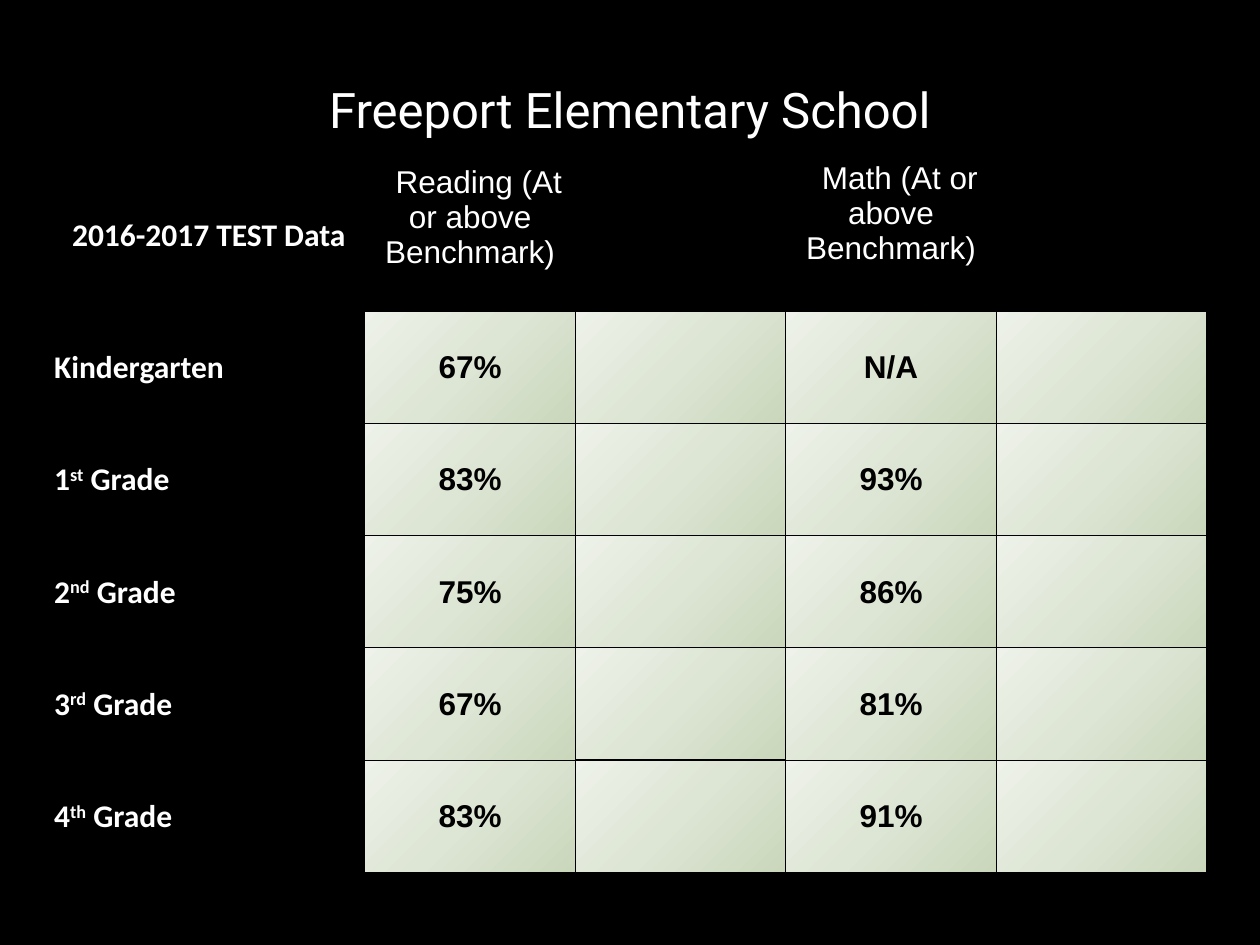
from dataclasses import dataclass

from pptx import Presentation
from pptx.dml.color import RGBColor as RGB
from pptx.enum.text import MSO_ANCHOR as Anchor, PP_ALIGN as Align
from pptx.oxml import parse_xml
from pptx.oxml.ns import nsdecls
from pptx.util import Pt


@dataclass(frozen=True)
class Theme:
    dark: str = "000000"
    light: str = "FFFFFF"
    stops: tuple = ((0, "CAD7BB"), (50, "DDE5D4"), (100, "EEF2EA"))
    title_size: int = 28
    text_size: int = 18
    title_font: str = "Roboto"
    label_font: str = "Calibri"
    value_font: str = "Arial"


class SlideBuilder:
    """Draws styled elements on the current slide."""

    def __init__(self, prs, theme):
        self.theme = theme
        self.s = prs.slides.add_slide(prs.slide_layouts[6])
        fill = self.s.background.fill
        fill.solid()
        fill.fore_color.rgb = RGB.from_string(theme.dark)

    def table(self, left, top, widths, heights):
        sp = self.s.shapes.add_table(len(heights), len(widths), Pt(left), Pt(top),
                                     Pt(sum(widths)), Pt(sum(heights)))
        tbl = sp.table
        tbl.first_row = tbl.horz_banding = False
        for col, width in zip(tbl.columns, widths):
            col.width = Pt(width)
        for row, height in zip(tbl.rows, heights):
            row.height = Pt(height)
        return tbl

    def cell(self, cell, borders, shaded=False):
        tcPr = cell._tc.get_or_add_tcPr()
        for side in "LRTB":
            tcPr.append(parse_xml(
                f'<a:ln{side} {nsdecls("a")} w="{Pt(borders.get(side, 0.5))}"><a:solidFill>'
                f'<a:srgbClr val="{self.theme.dark}"/></a:solidFill></a:ln{side}>'))
        if not shaded:
            cell.fill.background()
            return
        stops = "".join(f'<a:gs pos="{pos * 1000}"><a:srgbClr val="{color}"/></a:gs>'
                        for pos, color in self.theme.stops)
        tcPr.append(parse_xml(
            f'<a:gradFill {nsdecls("a")} rotWithShape="1"><a:gsLst>{stops}</a:gsLst>'
            f'<a:lin ang="{225 * 60000}" scaled="0"/></a:gradFill>'))

    def text(self, cell, parts, color, align=Align.CENTER, indent=0, bottom=0, **font):
        box = {"vertical_anchor": Anchor.MIDDLE, "margin_left": Pt(0.7),
               "margin_right": Pt(0.7), "margin_top": Pt(0.7), "margin_bottom": Pt(bottom)}
        for name, value in box.items():
            setattr(cell, name, value)
        p = cell.text_frame.paragraphs[0]
        p.alignment = align
        if indent:
            p._p.get_or_add_pPr().set("indent", str(Pt(indent)))
        for i, part in enumerate(parts):
            r = p.add_run()
            r.text = part
            for name, value in ({"size": Pt(self.theme.text_size)} | font).items():
                setattr(r.font, name, value)
            r.font.color.rgb = RGB.from_string(color)
            if i == 1:
                r._r.get_or_add_rPr().set("baseline", "30000")


def main():
    theme = Theme()
    prs = Presentation()
    prs.slide_width, prs.slide_height = Pt(720), Pt(540)
    slide = SlideBuilder(prs, theme)

    grades = [
        (("Kindergarten",), "67%", "N/A"),
        (("1", "st", " Grade"), "83%", "93%"),
        (("2", "nd", " Grade"), "75%", "86%"),
        (("3", "rd", " Grade"), "67%", "81%"),
        (("4", "th", " Grade"), "83%", "91%"),
    ]
    widths = [178.2] + [120.3] * 4
    heights = [54.7, 87] + [64.2] * len(grades)
    tbl = slide.table(30.3, 36, widths, heights)

    for row in range(len(heights)):
        for col in range(len(widths)):
            borders = {}
            if row == 0:
                borders["B"] = 1
            elif row == 1:
                borders |= {"T": 1, "B": 2}
            elif row == 2:
                borders["T"] = 2
            if col == 0 and row > 0:
                borders["L"] = 1
            if col == 2 and row in (5, 6):
                borders["B" if row == 5 else "T"] = 1
            slide.cell(tbl.cell(row, col), borders, shaded=row > 1 and col > 0)

    tbl.cell(0, 0).merge(tbl.cell(0, len(widths) - 1))
    slide.text(tbl.cell(0, 0), ["Freeport Elementary School"], theme.light,
               name=theme.title_font, size=Pt(theme.title_size))
    label = {"name": theme.label_font, "bold": True}
    slide.text(tbl.cell(1, 0), ["2016-2017 TEST Data"], theme.light, **label)
    for col, subject, bottom in ((1, "Reading", 20.5), (3, "Math", 25)):
        slide.text(tbl.cell(1, col), [f"{subject} (At or above Benchmark)"], theme.light,
                   indent=10, bottom=bottom, name=theme.value_font)

    for row, (grade, reading, math) in enumerate(grades, 2):
        slide.text(tbl.cell(row, 0), grade, theme.light, Align.LEFT, **label)
        for col, value in ((1, reading), (3, math)):
            slide.text(tbl.cell(row, col), [value], theme.dark,
                       name=theme.value_font, bold=True)

    prs.save("out.pptx")


if __name__ == "__main__":
    main()
